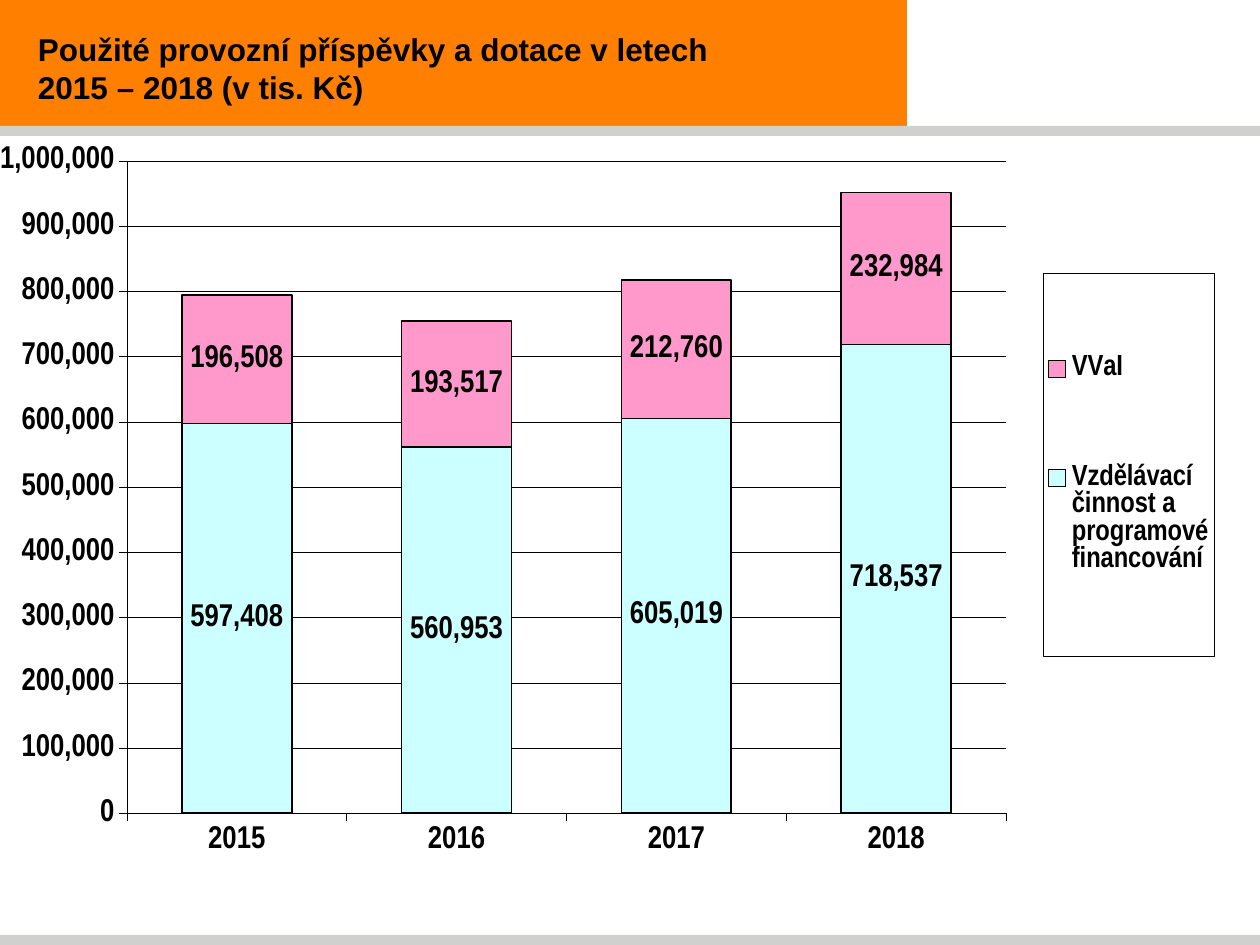
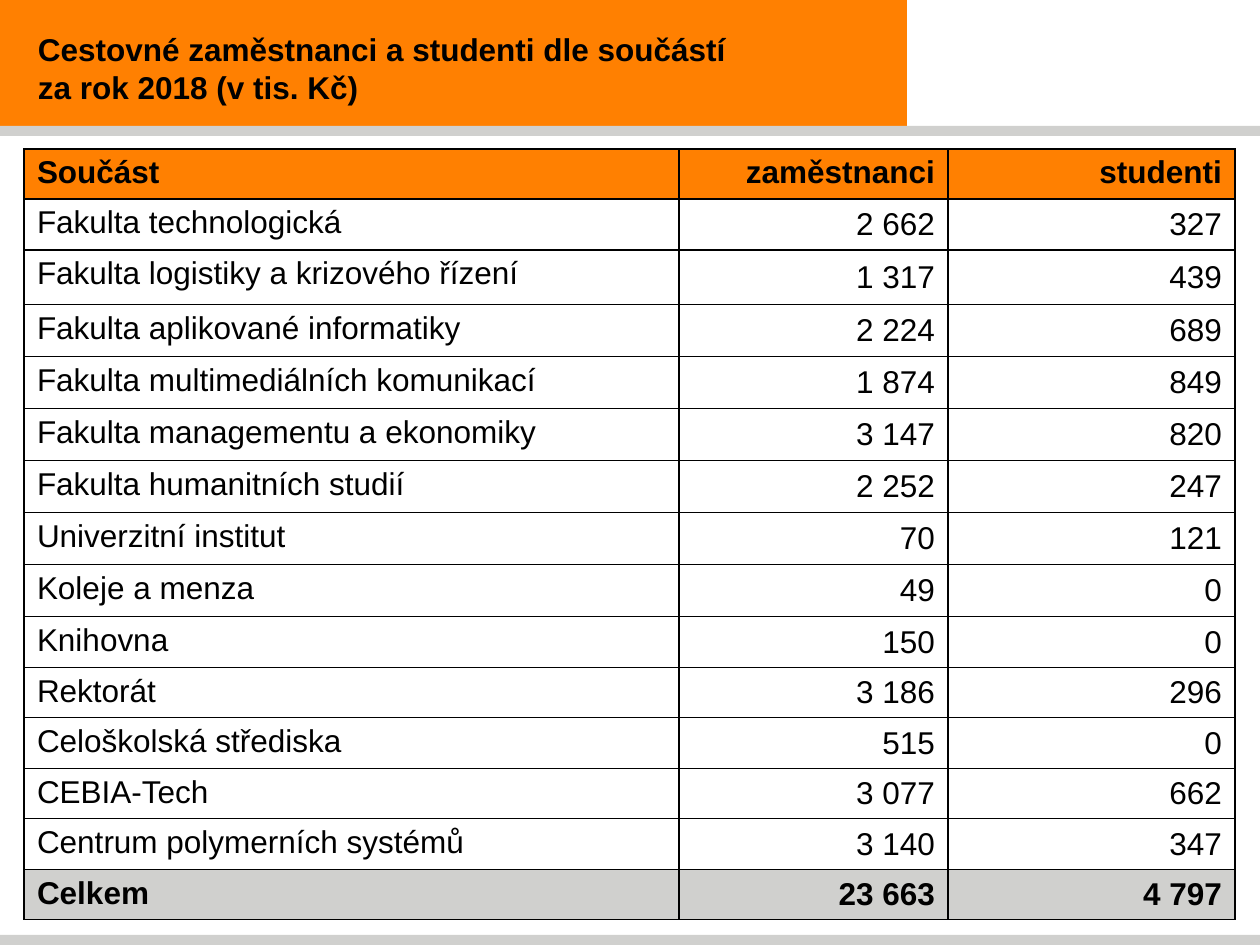
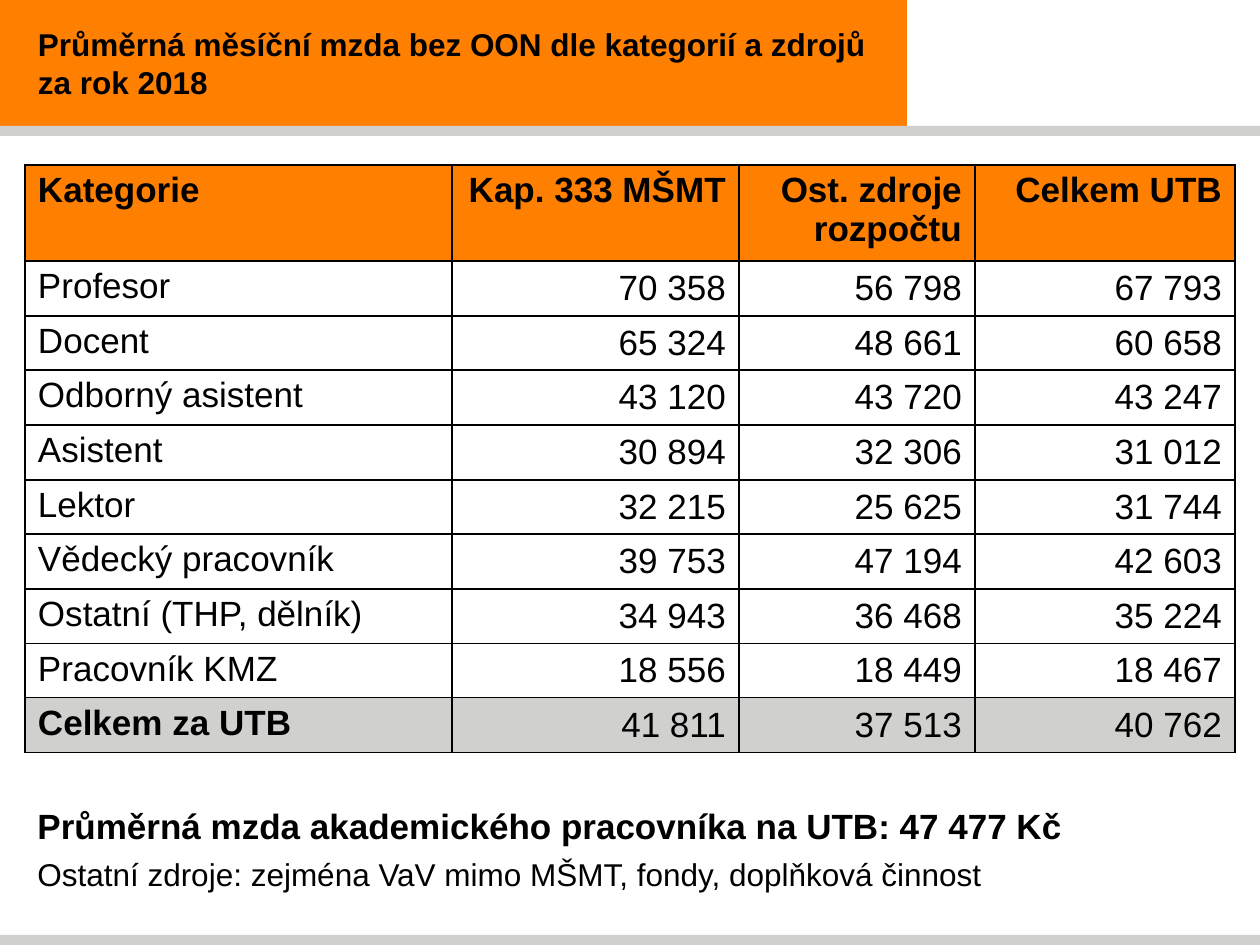
from pptx import Presentation
from pptx import util as u
from pptx.chart.data import CategoryChartData
from pptx.dml.color import RGBColor
from pptx.enum import chart as ch, shapes, text
from pptx.oxml import parse_xml
from pptx.oxml.ns import nsdecls, qn

PX = u.Inches(1) / 126

ORANGE = RGBColor(0xFF, 0x80, 0x01)
GREY = RGBColor(0xD0, 0xD0, 0xCE)
BLACK = RGBColor(0, 0, 0)
CYAN = RGBColor(0xCC, 0xFF, 0xFF)
PINK = RGBColor(0xFF, 0x99, 0xCC)

BODY_FONT, CHART_FONT = "Arial", "Arial Narrow"

# left, top, width, height, colour
BANDS = [
    (0, 0, 907, 126, ORANGE),
    (0, 935, 1260, 10, GREY),
    (0, 126, 1260, 10, GREY),
]

FUNDING_TITLE = ["Použité provozní příspěvky a dotace v letech", "2015 – 2018 (v tis. Kč)"]
YEARS = ["2015", "2016", "2017", "2018"]
FUNDING = [
    ("Vzdělávací činnost a programové financování", CYAN, (597408, 560953, 605019, 718537)),
    ("VVaI", PINK, (196508, 193517, 212760, 232984)),
]

TRAVEL_TITLE = ["Cestovné zaměstnanci a studenti dle součástí", "za rok 2018 (v tis. Kč)"]
TRAVEL = [
    ("Součást", "zaměstnanci", "studenti"),
    ("Fakulta technologická", "2 662", "327"),
    ("Fakulta logistiky a krizového řízení", "1 317", "439"),
    ("Fakulta aplikované informatiky", "2 224", "689"),
    ("Fakulta multimediálních komunikací", "1 874", "849"),
    ("Fakulta managementu a ekonomiky", "3 147", "820"),
    ("Fakulta humanitních studií", "2 252", "247"),
    ("Univerzitní institut", "70", "121"),
    ("Koleje a menza", "49", "0"),
    ("Knihovna", "150", "0"),
    ("Rektorát", "3 186", "296"),
    ("Celoškolská střediska", "515", "0"),
    ("CEBIA-Tech", "3 077", "662"),
    ("Centrum polymerních systémů", "3 140", "347"),
    ("Celkem", "23 663", "4 797"),
]
TRAVEL_COLUMNS = [655, 269, 287]
TRAVEL_ROWS = [48, 51, 55] + [52] * 6 + [51, 50] * 3

WAGES_TITLE = ["Průměrná měsíční mzda bez OON dle kategorií a zdrojů", "za rok 2018"]
WAGES = [
    ("Kategorie", "Kap. 333 MŠMT", "Ost. zdroje rozpočtu", "Celkem UTB"),
    ("Profesor", "70 358", "56 798", "67 793"),
    ("Docent", "65 324", "48 661", "60 658"),
    ("Odborný asistent", "43 120", "43 720", "43 247"),
    ("Asistent", "30 894", "32 306", "31 012"),
    ("Lektor", "32 215", "25 625", "31 744"),
    ("Vědecký pracovník", "39 753", "47 194", "42 603"),
    ("Ostatní (THP, dělník)", "34 943", "36 468", "35 224"),
    ("Pracovník KMZ", "18 556", "18 449", "18 467"),
    ("Celkem za UTB", "41 811", "37 513", "40 762"),
]
WAGES_COLUMNS = [427, 287, 236, 260]
WAGES_ROWS = [90] + [55, 54, 55] * 3
WAGES_NOTES = [
    ("Průměrná mzda akademického pracovníka na UTB: 47 477 Kč", 20, True),
    ("Ostatní zdroje: zejména VaV mimo MŠMT, fondy, doplňková činnost", 18, False),
]


def px(*lengths):
    return [u.Emu(round(length * PX)) for length in lengths]


def set_font(font, size, bold=True, name=BODY_FONT):
    font.name, font.size, font.bold = name, u.Pt(size), bold
    font.color.rgb = BLACK


def set_line(line, width):
    line.color.rgb = BLACK
    line.width = u.Pt(width)


def add_titled_slide(deck, title_lines, title_top=9):
    """Add a slide with the shared bands and its title."""
    slide = deck.slides.add_slide(deck.slide_layouts[6])
    for *place, colour in BANDS:
        band = slide.shapes.add_shape(shapes.MSO_SHAPE.RECTANGLE, *px(*place))
        band.shadow.inherit = False
        band.fill.solid()
        band.fill.fore_color.rgb = colour
        band.line.fill.background()
    title = slide.shapes.add_textbox(*px(0, title_top, 907, 126 - title_top)).text_frame
    title.word_wrap = True
    title.vertical_anchor = text.MSO_ANCHOR.MIDDLE
    title.margin_left, = px(38)
    title.text = "\n".join(title_lines)
    for line in title.paragraphs:
        set_font(line.runs[0].font, 18)
    return slide


def manual_layout(x, y, width, height, inner=False):
    target = '<c:layoutTarget val="inner"/>' if inner else ""
    return parse_xml(
        f'<c:layout {nsdecls("c")}><c:manualLayout>{target}'
        '<c:xMode val="edge"/><c:yMode val="edge"/>'
        f'<c:x val="{x}"/><c:y val="{y}"/><c:w val="{width}"/><c:h val="{height}"/>'
        "</c:manualLayout></c:layout>")


def drop_layout(element):
    for layout in element.findall(qn("c:layout")):
        element.remove(layout)


def add_funding_chart(slide):
    data = CategoryChartData(number_format="#,##0")
    data.categories = YEARS
    for name, _, amounts in FUNDING:
        data.add_series(name, amounts)
    chart = slide.shapes.add_chart(
        ch.XL_CHART_TYPE.COLUMN_STACKED, *px(0, 146, 1226, 750), data).chart
    chart.has_title = False
    set_font(chart.font, 18, name=CHART_FONT)

    columns = chart.plots[0]
    columns.gap_width, columns.overlap = 100, 100
    columns.vary_by_categories = False
    for series, (_, colour, _) in zip(columns.series, FUNDING):
        series.format.fill.solid()
        series.format.fill.fore_color.rgb = colour
        set_line(series.format.line, 1)
        labels = series.data_labels
        labels.show_value = True
        labels.number_format, labels.number_format_is_linked = "#,##0", False
        set_font(labels.font, 18, name=CHART_FONT)

    amounts, years = chart.value_axis, chart.category_axis
    for axis in (amounts, years):
        axis.major_tick_mark = ch.XL_TICK_MARK.OUTSIDE
        axis.minor_tick_mark = ch.XL_TICK_MARK.NONE
        set_line(axis.format.line, 0.25)
        set_font(axis.tick_labels.font, 18, name=CHART_FONT)
    years.tick_label_position = ch.XL_TICK_LABEL_POSITION.LOW
    amounts.minimum_scale, amounts.maximum_scale, amounts.major_unit = 0, 1000000, 100000
    amounts.tick_labels.number_format = "#,##0"
    amounts.tick_labels.number_format_is_linked = False
    set_line(amounts.major_gridlines.format.line, 0.25)

    plot_area = chart._chartSpace.find(".//" + qn("c:plotArea"))
    drop_layout(plot_area)
    plot_area.insert(0, manual_layout(0.1, 0.02, 0.72, 0.87, inner=True))
    add_legend(chart)


def add_legend(chart):
    chart.has_legend = True
    legend = chart.legend
    legend.position = ch.XL_LEGEND_POSITION.RIGHT
    legend.include_in_layout = False
    set_font(legend.font, 16.6, name=CHART_FONT)
    element = legend._element
    drop_layout(element)
    element.find(qn("c:legendPos")).addnext(manual_layout(0.85, 0.17, 0.14, 0.51))
    element.find(qn("c:txPr")).addprevious(parse_xml(
        f'<c:spPr {nsdecls("c", "a")}><a:noFill/><a:ln w="3175"><a:solidFill>'
        f'<a:srgbClr val="{BLACK}"/></a:solidFill></a:ln></c:spPr>'))


def add_borders(cell):
    properties = cell._tc.get_or_add_tcPr()
    for side in "LRTB":
        properties.append(parse_xml(
            f'<a:ln{side} {nsdecls("a")} w="12700"><a:solidFill>'
            f'<a:srgbClr val="{BLACK}"/></a:solidFill></a:ln{side}>'))


def add_summary_table(slide, left, top, content, widths, heights, size, bold_totals):
    """Add a table with an orange heading row and a grey closing row."""
    table = slide.shapes.add_table(
        len(content), len(widths), *px(left, top, sum(widths), sum(heights))).table
    table.first_row = table.horz_banding = False
    for column, width in zip(table.columns, px(*widths)):
        column.width = width
    for row, height in zip(table.rows, px(*heights)):
        row.height = height
    last = len(content) - 1
    for r, entries in enumerate(content):
        for c, entry in enumerate(entries):
            cell = table.cell(r, c)
            add_borders(cell)
            if r in (0, last):
                cell.fill.solid()
                cell.fill.fore_color.rgb = GREY if r else ORANGE
            else:
                cell.fill.background()
            cell.margin_left, cell.margin_right, cell.margin_top, cell.margin_bottom = px(13, 13, 6, 6)
            is_number = r > 0 and c > 0
            cell.vertical_anchor = text.MSO_ANCHOR.MIDDLE if is_number else text.MSO_ANCHOR.TOP
            cell.text_frame.text = entry
            line = cell.text_frame.paragraphs[0]
            line.alignment = text.PP_ALIGN.RIGHT if c else text.PP_ALIGN.LEFT
            bold = r == 0 or (r == last and (c == 0 or bold_totals))
            set_font(line.runs[0].font, size, bold)


def add_notes_below(slide):
    frame = slide.shapes.add_textbox(*px(25, 798, 1142, 101)).text_frame
    frame.word_wrap = True
    frame.text = "\n".join(note for note, _, _ in WAGES_NOTES)
    for line, (_, size, bold) in zip(frame.paragraphs, WAGES_NOTES):
        set_font(line.runs[0].font, size, bold)
    frame.paragraphs[1].space_before = u.Pt(5)


def main():
    deck = Presentation()
    deck.slide_width, deck.slide_height = px(1260, 945)

    add_funding_chart(add_titled_slide(deck, FUNDING_TITLE))

    travel = add_titled_slide(deck, TRAVEL_TITLE)
    add_summary_table(travel, 24, 149, TRAVEL, TRAVEL_COLUMNS, TRAVEL_ROWS, 18, True)

    wages = add_titled_slide(deck, WAGES_TITLE, title_top=0)
    add_summary_table(wages, 25, 165, WAGES, WAGES_COLUMNS, WAGES_ROWS, 20, False)
    add_notes_below(wages)

    deck.save("out.pptx")


if __name__ == "__main__":
    main()
